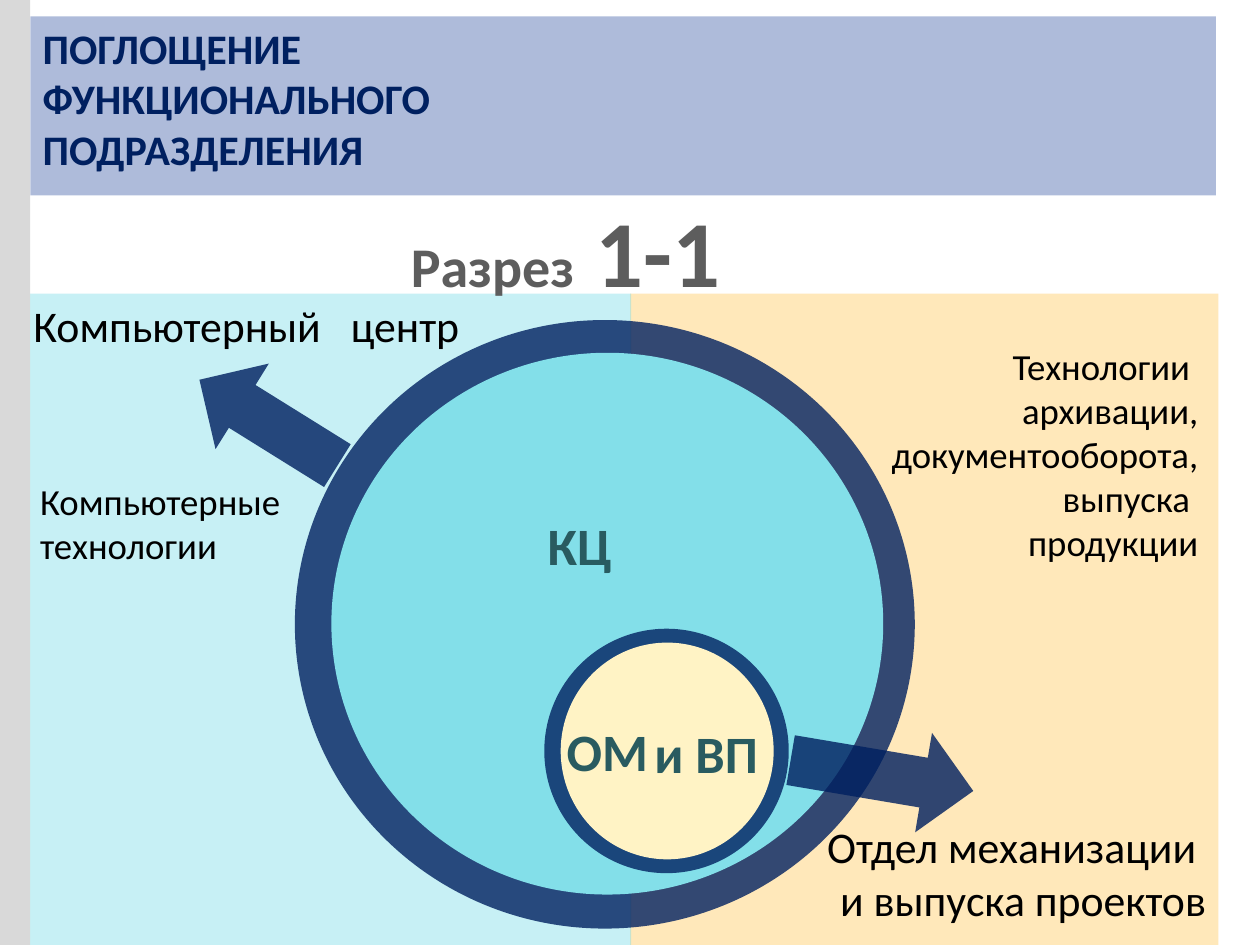
"""Build the slide on a functional unit absorbed by the computer centre."""
from pptx import Presentation
from pptx import util as u
from pptx.dml import color
from pptx.enum import shapes, text
from pptx.oxml import ns
from lxml import etree

HUES = {
    "navy": "002060", "aqua": "83DFE9", "amber": "FFCC66", "cream": "FFF3C5",
    "band": "8FA2CD", "edge": "D9D9D9", "black": "000000", "teal": "295B60",
    "gray": "5D5D5D",
}
KIND = shapes.MSO_SHAPE
RECT, OVAL, ARROW = KIND.RECTANGLE, KIND.OVAL, KIND.DOWN_ARROW
LEFT, MID, RIGHT = text.PP_ALIGN.LEFT, text.PP_ALIGN.CENTER, text.PP_ALIGN.RIGHT

FORMS = [
    (RECT, (4.75, 2.58, 5.17, 4.67), 90, "amber", 45),
    (RECT, (0.03, 2.52, 5.17, 4.79), 90, "aqua", 45),
    (OVAL, (2.34, 2.54, 4.92, 4.83), 0, "navy", 80),
    (OVAL, (2.63, 2.8, 4.38, 4.3), 0, "aqua", 100),
    (RECT, (0.24, 0.13, 9.41, 1.42), 0, "band", 72),
    (RECT, (0, 0, 0.24, 7.5), 0, "edge", 100),
    (OVAL, (4.32, 4.99, 1.94, 1.94), 0, "navy", 80),
    (OVAL, (4.45, 5.1, 1.69, 1.72), 0, "cream", 100),
    (ARROW, (6.6, 5.42, 0.8, 1.47), 279.6, "navy", 81),
    (ARROW, (1.73, 2.71, 0.8, 1.29), 121.9, "navy", 81),
]

STYLES = {
    "head": ("navy", {"size": u.Pt(24), "bold": True}),
    "note": ("black", {"size": u.Pt(21), "bold": False}),
    "unit": ("black", {"size": u.Pt(25), "bold": False}),
    "code": ("teal", {"size": u.Pt(30), "bold": True}),
    "cut": ("gray", {"size": u.Pt(32), "bold": True}),
}
LABELS = [
    ((0.24, 0.13, 3.38, 1.31), "head", LEFT, False,
     ["ПОГЛОЩЕНИЕ", "ФУНКЦИОНАЛЬНОГО", "ПОДРАЗДЕЛЕНИЯ"]),
    ((0.22, 3.75, 2.2, 0.81), "note", LEFT, False, ["Компьютерные", "технологии"]),
    ((0.15, 2.32, 2.59, 0.52), "unit", MID, False, ["Компьютерный "]),
    ((2.68, 2.32, 1.07, 0.52), "unit", MID, False, ["центр"]),
    ((4.86, 6.46, 4.81, 0.94), "unit", RIGHT, True,
     ["Отдел механизации ", "и выпуска проектов"]),
    ((2.41, 1.48, 4.16, 1.01), "cut", MID, True, ["Разрез"]),
    ((4.2, 5.66, 1.24, 0.61), "code", MID, True, ["ОМ"]),
    ((5.07, 5.67, 1.07, 0.61), "code", MID, False, ["и ВП"]),
    ((6.95, 2.68, 2.66, 1.87), "note", RIGHT, False,
     ["Технологии ", "архивации,", "документооборота,", "выпуска ", "продукции"]),
    ((3.98, 4.02, 1.24, 0.61), "code", MID, True, ["КЦ"]),
]


def paint(fill, hue, alpha=100):
    fill.solid()
    fill.fore_color.rgb = color.RGBColor.from_string(HUES[hue])
    if alpha < 100:
        tint = fill._xPr.find(".//" + ns.qn("a:srgbClr"))
        etree.SubElement(tint, ns.qn("a:alpha")).set("val", str(alpha * 1000))


def style(run, name):
    hue, form = STYLES[name]
    for key, val in {"name": "Calibri", **form}.items():
        setattr(run.font, key, val)
    paint(run.font.fill, hue)


deck = Presentation()
deck.slide_width, deck.slide_height = u.Inches(10), u.Inches(7.5)
slide = deck.slides.add_slide(deck.slide_layouts[6])

for kind, spot, turn, hue, alpha in FORMS:
    form = slide.shapes.add_shape(kind, *map(u.Inches, spot))
    form.rotation = turn
    form.shadow.inherit = False
    form.line.fill.background()
    paint(form.fill, hue, alpha)

for spot, name, align, wrap, lines in LABELS:
    frame = slide.shapes.add_textbox(*map(u.Inches, spot)).text_frame
    frame.word_wrap = wrap
    frame.auto_size = text.MSO_AUTO_SIZE.SHAPE_TO_FIT_TEXT
    for num, line in enumerate(lines):
        para = frame.add_paragraph() if num else frame.paragraphs[0]
        para.alignment = align
        run = para.add_run()
        run.text = line
        style(run, name)
    if name == "cut":
        mark = para.add_run()
        mark.text = " 1-1"
        style(mark, name)
        mark.font.size = u.Pt(54)

deck.save("out.pptx")
